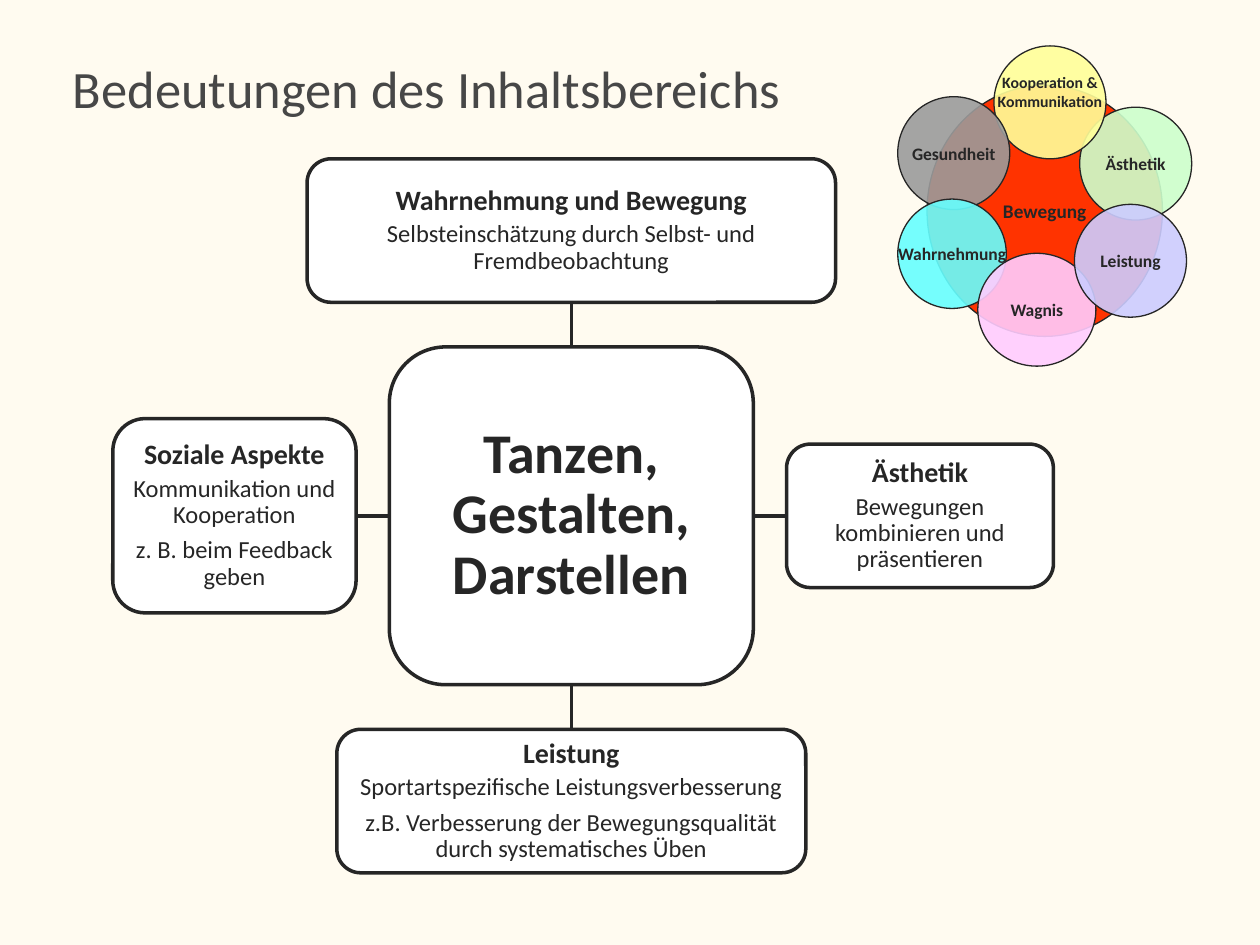
from pptx import Presentation
from pptx.dml.color import RGBColor
from pptx.enum import shapes, text
from pptx.oxml import parse_xml
from pptx.oxml.ns import nsdecls, qn
from pptx.util import Pt

THEME = dict(font="Calibri", ink="262626", title="474747", back="FFFBF0", box="FFFFFF",
             title_size=30, core_size=32, head_size=16, body_size=14,
             box_line=2, circle_line=0.75)

# Content
TITLE = "Bedeutungen des Inhaltsbereichs"
CORE = "Tanzen, Gestalten, Darstellen"

# side: (width, height, heading, body paragraphs)
ASPECTS = {
    "top": (302, 82, "Wahrnehmung und Bewegung",
            ["Selbsteinschätzung durch Selbst- und Fremdbeobachtung"]),
    "right": (152.5, 82, "Ästhetik", ["Bewegungen kombinieren und präsentieren"]),
    "bottom": (268, 82, "Leistung",
               ["Sportartspezifische Leistungsverbesserung",
                "z.B. Verbesserung der Bewegungsqualität durch systematisches Üben"]),
    "left": (139, 111, "Soziale Aspekte",
             ["Kommunikation und Kooperation", "z. B. beim Feedback geben"]),
}

# label, centre x, centre y, width, height, colour, opacity %, size, bottom inset
CIRCLES = [
    ("Bewegung", 597, 120.5, 134.5, 143.5, "FF3300", 100, 11, 3.6),
    ("Ästhetik", 649, 93.5, 64, 64.5, "CCFFCC", 90, 10, 3.6),
    ("Kooperation &\vKommunikation", 600, 58.5, 64, 64.5, "FFFF99", 90, 9, 15.6),
    ("Gesundheit", 545, 87.5, 64, 64.5, "9B9B9B", 90, 10, 3.6),
    ("Wahrnehmung", 544, 145, 62, 62.5, "66FFFF", 90, 10, 3.6),
    ("Wagnis", 592.5, 177, 67.5, 64.5, "FFCCFF", 90, 10, 3.6),
    ("Leistung", 646, 149, 64, 64.5, "CCCCFF", 90, 10, 3.6),
]

# Layout: the core sits in the middle, one aspect on each side
CORE_X, CORE_Y, CORE_W, CORE_H = 326.5, 294.75, 208, 193
GAP_X, GAP_Y = 19, 25.5
# side: (x direction, y direction, site on core, site on aspect)
SIDES = {"top": (0, -1, 0, 2), "right": (1, 0, 3, 1),
         "bottom": (0, 1, 2, 0), "left": (-1, 0, 1, 3)}


def rgb(value):
    return RGBColor.from_string(value)


def style(p, size, bold=False, color=THEME["ink"], align=text.PP_ALIGN.CENTER):
    p.alignment = align
    for r in p.runs:
        r.font.name, r.font.size, r.font.bold = THEME["font"], Pt(size), bold
        r.font.color.rgb = rgb(color)


def add_centred(slide, kind, cx, cy, w, h, fill, line):
    s = slide.shapes.add_shape(kind, Pt(cx - w / 2), Pt(cy - h / 2), Pt(w), Pt(h))
    s.shadow.inherit = False
    s.fill.solid()
    s.fill.fore_color.rgb = rgb(fill)
    s.line.color.rgb, s.line.width = rgb(THEME["ink"]), Pt(line)
    s.text_frame.vertical_anchor = text.MSO_ANCHOR.MIDDLE
    return s


def add_box(slide, cx, cy, w, h, paragraphs, inset):
    """paragraphs: (wording, size, bold, space after)"""
    s = add_centred(slide, shapes.MSO_SHAPE.ROUNDED_RECTANGLE, cx, cy, w, h,
                    THEME["box"], THEME["box_line"])
    tf = s.text_frame
    tf.word_wrap = True
    tf.margin_left = tf.margin_right = tf.margin_top = tf.margin_bottom = Pt(inset)
    tf.text = "\n".join(item[0] for item in paragraphs)
    for p, (_, size, bold, after) in zip(tf.paragraphs, paragraphs):
        style(p, size, bold)
        p.line_spacing, p.space_after = 0.9, Pt(after)
    return s


def add_link(slide, core, core_site, box, box_site):
    c = slide.shapes.add_connector(shapes.MSO_CONNECTOR.STRAIGHT, 0, 0, 0, 0)
    c.begin_connect(core, core_site)
    c.end_connect(box, box_site)
    c.line.color.rgb, c.line.width = rgb(THEME["ink"]), Pt(THEME["box_line"])
    c._element.spPr.append(parse_xml(f"<a:effectLst {nsdecls('a')}/>"))


def add_circle(slide, label, cx, cy, w, h, fill, opacity, size, bottom):
    s = add_centred(slide, shapes.MSO_SHAPE.OVAL, cx, cy, w, h, fill, THEME["circle_line"])
    if opacity < 100:
        color = s._element.spPr.find(qn("a:solidFill"))[0]
        color.append(parse_xml(f'<a:alpha {nsdecls("a")} val="{opacity * 1000}"/>'))
    tf = s.text_frame
    tf.word_wrap = False
    tf.margin_bottom = Pt(bottom)
    tf.text = label
    style(tf.paragraphs[0], size, True)


def main():
    prs = Presentation()
    prs.slide_width, prs.slide_height = Pt(720), Pt(540)
    slide = prs.slides.add_slide(prs.slide_layouts[5])
    slide.background.fill.solid()
    slide.background.fill.fore_color.rgb = rgb(THEME["back"])

    # Title
    title = slide.shapes.title
    title.left, title.top, title.width, title.height = Pt(34.5), Pt(23), Pt(662), Pt(54)
    title.text_frame.text = TITLE
    title.text_frame.vertical_anchor = text.MSO_ANCHOR.MIDDLE
    style(title.text_frame.paragraphs[0], THEME["title_size"], False, THEME["title"],
          text.PP_ALIGN.LEFT)

    # Flower of circles
    for circle in CIRCLES:
        add_circle(slide, *circle)

    # Core with its four aspects
    core = add_box(slide, CORE_X, CORE_Y, CORE_W, CORE_H,
                   [(CORE, THEME["core_size"], True, 0)], 6.5)
    for side, (w, h, heading, body) in ASPECTS.items():
        dx, dy, core_site, box_site = SIDES[side]
        cx = CORE_X + dx * (CORE_W / 2 + GAP_X + w / 2)
        cy = CORE_Y + dy * (CORE_H / 2 + GAP_Y + h / 2)
        paragraphs = [(heading, THEME["head_size"], True, 3)]
        paragraphs += [(line, THEME["body_size"], False, 4.9) for line in body]
        box = add_box(slide, cx, cy, w, h, paragraphs, 3)
        add_link(slide, core, core_site, box, box_site)

    prs.save("out.pptx")


if __name__ == "__main__":
    main()
